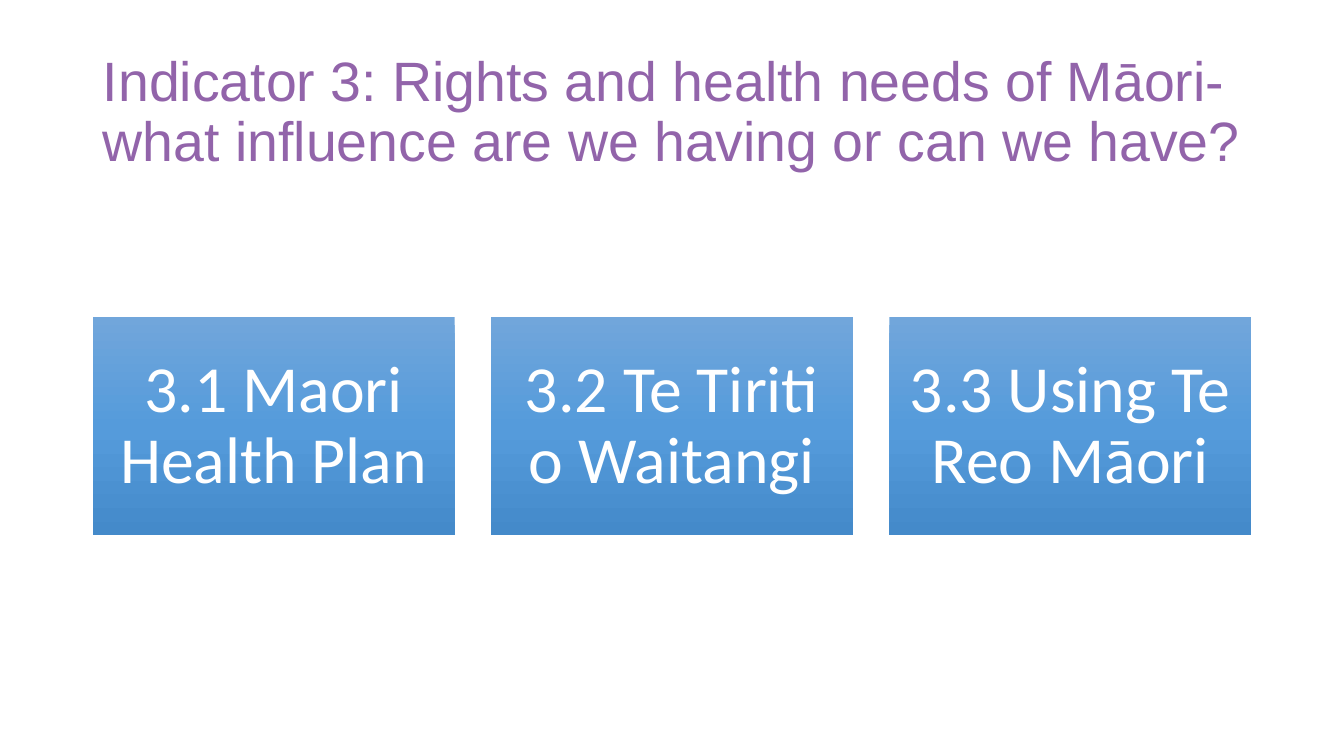
from copy import deepcopy

from pptx import Presentation
from pptx.dml.color import RGBColor
from pptx.enum.shapes import MSO_SHAPE
from pptx.enum.text import MSO_ANCHOR, MSO_AUTO_SIZE, PP_ALIGN
from pptx.oxml.ns import qn
from pptx.util import Inches, Pt

PURPLE = RGBColor(0x92, 0x64, 0xAA)
WHITE = RGBColor(0xFF, 0xFF, 0xFF)
BLUES = (
    RGBColor(0x71, 0xA6, 0xDB),
    RGBColor(0x55, 0x9B, 0xDB),
    RGBColor(0x44, 0x8A, 0xCA),
)

TITLE = "Indicator 3: Rights and health needs of Māori-what influence are we having or can we have?"
TOPICS = ("3.1 Maori Health Plan", "3.2 Te Tiriti o Waitangi", "3.3 Using Te Reo Māori")

LEFT, TOP = 0.92, 3.15
CARD_WIDTH, CARD_HEIGHT = 3.59, 2.16
CARD_STEP = 3.95


def write_text(shape, text, font_name, size, color, align):
    frame = shape.text_frame
    frame.text = text
    frame.word_wrap = True
    frame.auto_size = MSO_AUTO_SIZE.NONE
    frame.vertical_anchor = MSO_ANCHOR.MIDDLE
    para = frame.paragraphs[0]
    para.alignment = align
    para.line_spacing = 0.9
    font = para.runs[0].font
    font.name = font_name
    font.size = Pt(size)
    font.color.rgb = color


def fill_with_blues(shape):
    """Shade the shape from top to bottom through three blues."""
    fill = shape.fill
    fill.gradient()
    fill.gradient_angle = 270
    first = shape.element.spPr.find(".//" + qn("a:gs"))
    middle = deepcopy(first)
    middle.set("pos", "50000")
    first.addnext(middle)
    for stop, color in zip(fill.gradient_stops, BLUES):
        stop.color.rgb = color


def add_title(page, text):
    title = page.shapes.title
    title.left, title.top = Inches(LEFT), Inches(0.4)
    title.width, title.height = Inches(11.5), Inches(1.45)
    write_text(title, text, "Arial", 39.6, PURPLE, PP_ALIGN.LEFT)


def add_card(page, left, text):
    card = page.shapes.add_shape(
        MSO_SHAPE.RECTANGLE, Inches(left), Inches(TOP), Inches(CARD_WIDTH), Inches(CARD_HEIGHT)
    )
    card.shadow.inherit = False
    card.line.fill.background()
    fill_with_blues(card)
    write_text(card, text, "Calibri", 47, WHITE, PP_ALIGN.CENTER)
    frame = card.text_frame
    frame.margin_left = frame.margin_right = Inches(0.18)
    frame.margin_top = frame.margin_bottom = Inches(0.18)


def main():
    deck = Presentation()
    deck.slide_width, deck.slide_height = Inches(13.33), Inches(7.5)
    page = deck.slides.add_slide(deck.slide_layouts.get_by_name("Title Only"))
    add_title(page, TITLE)
    for index, topic in enumerate(TOPICS):
        add_card(page, LEFT + index * CARD_STEP, topic)
    deck.save("out.pptx")


if __name__ == "__main__":
    main()
